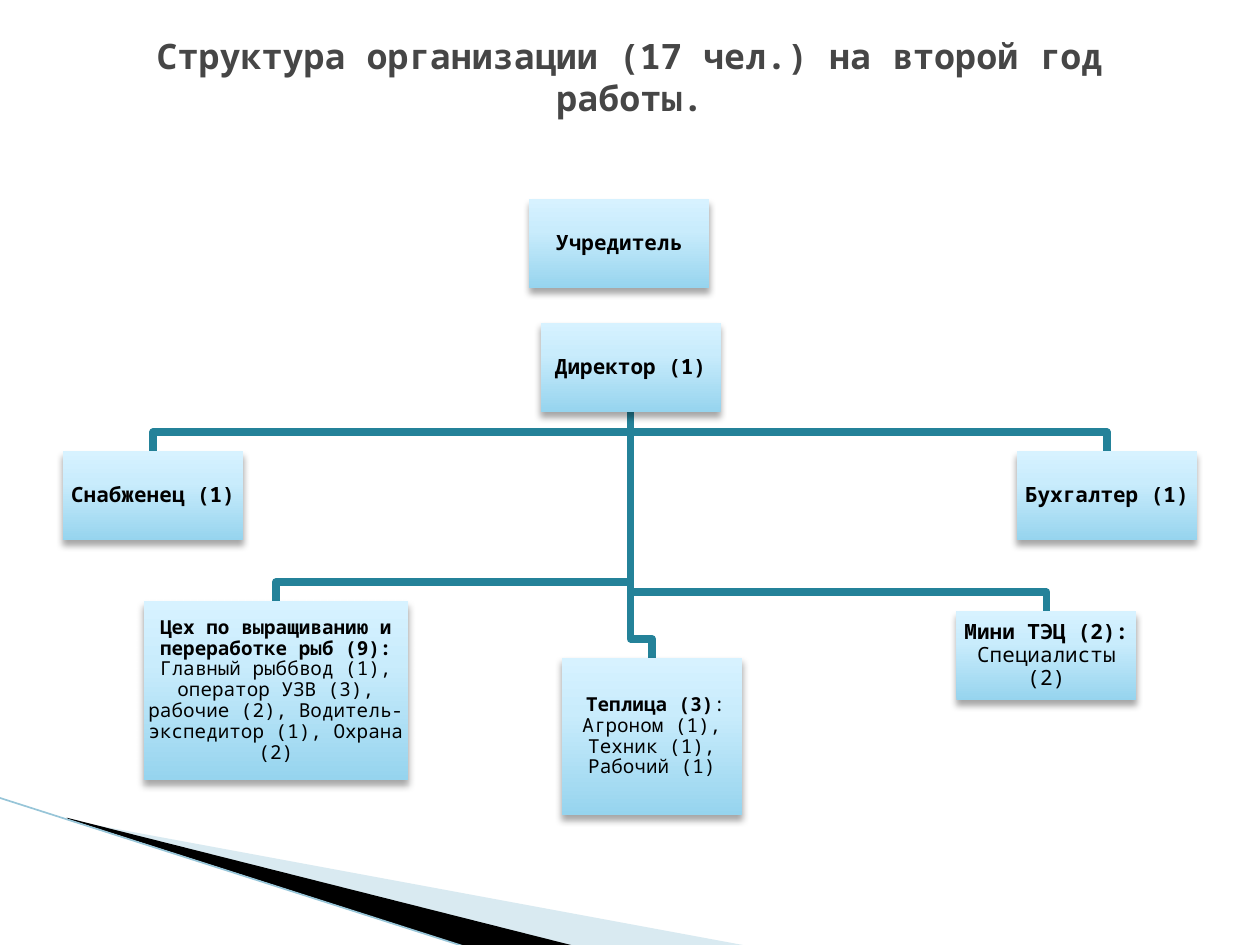
import copy
from dataclasses import dataclass

import lxml.etree
import pptx
import pptx.dml.color
import pptx.enum.shapes
import pptx.enum.text
import pptx.oxml.ns
import pptx.util

Inches = pptx.util.Inches
qn = pptx.oxml.ns.qn


@dataclass
class Theme:
    font: str = "Noto Sans Mono"
    title: int = 20
    body: int = 12
    small: int = 11
    tiny: int = 7
    ink: str = "000000"
    head: str = "464646"
    link: str = "248299"
    mist: str = "A0CBDC"
    edge: str = "97C5D8"
    grad: tuple = ((0, "96D4EE"), (0.65, "C9ECFC"), (1, "D7F2FF"))


def rgb(code):
    return pptx.dml.color.RGBColor.from_string(code)


def node(base, tag, **attrs):
    return lxml.etree.SubElement(base, qn(tag), attrs)


def add_run(para, text, *, font, size, color, bold=False):
    run = para.add_run()
    run.text = text
    run.font.name = font
    run.font.size = pptx.util.Pt(size)
    run.font.bold = bold
    run.font.color.rgb = rgb(color)


class Deck:
    def __init__(self, theme):
        self.theme = theme
        self.file = pptx.Presentation()
        self.file.slide_width = Inches(10)
        self.file.slide_height = Inches(7.5)
        self.slide = self.file.slides.add_slide(self.file.slide_layouts[6])
        self.shapes = self.slide.shapes

    def label(self, shape, runs, color, inset=None, gap=None):
        """Fill a shape with runs of (text, size, bold)."""
        frame = shape.text_frame
        frame.word_wrap = True
        frame.vertical_anchor = pptx.enum.text.MSO_ANCHOR.MIDDLE
        if inset is not None:
            frame.margin_left = frame.margin_right = Inches(inset)
            frame.margin_top = frame.margin_bottom = Inches(inset)
        para = frame.paragraphs[0]
        para.alignment = pptx.enum.text.PP_ALIGN.CENTER
        if gap:
            para.line_spacing = gap
        for text, size, bold in runs:
            add_run(para, text, font=self.theme.font, size=size,
                    color=color, bold=bold)

    def title(self, text, area):
        box = self.shapes.add_textbox(*map(Inches, area))
        self.label(box, [(text, self.theme.title, True)], self.theme.head)

    def trace(self, points, close):
        spots = [(Inches(x), Inches(y)) for x, y in points]
        maker = self.shapes.build_freeform(*spots[0])
        maker.add_line_segments(spots[1:], close=close)
        shape = maker.convert_to_shape()
        shape.shadow.inherit = False
        return shape

    def wedge(self, points, color, alpha=None):
        shape = self.trace(points, True)
        shape.fill.solid()
        shape.fill.fore_color.rgb = rgb(color)
        shape.line.fill.background()
        if alpha:
            tone = shape._element.spPr.find(qn("a:solidFill"))[0]
            node(tone, "a:alpha", val=str(alpha * 1000))

    def line(self, start, end, color, width):
        kind = pptx.enum.shapes.MSO_CONNECTOR.STRAIGHT
        line = self.shapes.add_connector(kind, *map(Inches, start + end))
        line.line.color.rgb = rgb(color)
        line.line.width = pptx.util.Pt(width)
        node(line._element.spPr, "a:effectLst")

    def elbow(self, source, target, drop=0.15):
        """Link the foot of one box to the top of another."""
        x, y = source[0] + source[2] / 2, source[1] + source[3]
        to, top = target[0] + target[2] / 2, target[1]
        bend = top - drop
        shape = self.trace([(x, y), (x, bend), (to, bend), (to, top)], False)
        shape.fill.background()
        shape.line.color.rgb = rgb(self.theme.link)
        shape.line.width = pptx.util.Pt(4.33)

    def card(self, area, runs, inset=0.01):
        kind = pptx.enum.shapes.MSO_SHAPE.RECTANGLE
        shape = self.shapes.add_shape(kind, *map(Inches, area))
        shape.line.fill.background()
        # Three-stop gradient, dark at the foot
        shape.fill.gradient()
        shape.fill.gradient_angle = 90
        props = shape._element.spPr
        stops = props.find(qn("a:gradFill")).find(qn("a:gsLst"))
        stops.append(copy.deepcopy(stops[0]))
        for stop, (place, color) in zip(shape.fill.gradient_stops,
                                        self.theme.grad):
            stop.position = place
            stop.color.rgb = rgb(color)
        # Soft shadow below
        shape.shadow.inherit = False
        shade = node(props.find(qn("a:effectLst")), "a:outerShdw",
                     blurRad=str(pptx.util.Pt(4)), dist=str(pptx.util.Pt(3)),
                     dir="5400000", rotWithShape="0")
        tone = node(shade, "a:srgbClr", val=self.theme.ink)
        node(tone, "a:alpha", val="35000")
        self.label(shape, runs, self.theme.ink, inset, 0.9)


def main():
    theme = Theme()
    deck = Deck(theme)
    body, small = theme.body, theme.small
    wide, high = 1.43, 0.71

    # Corner wedges
    deck.wedge([(0.55, 6.51), (5.95, 7.51), (4.56, 7.51), (0.55, 6.5)],
               theme.mist, 40)
    deck.wedge([(0.53, 6.49), (4.57, 7.51), (3.72, 7.52), (0.54, 6.5)],
               theme.ink)
    deck.line((-0.01, 6.33), (3.71, 7.52), theme.edge, 0.95)

    deck.title("Структура организации (17 чел.) на второй год работы.",
               (0.5, 0.3, 9, 0.61))

    # Staff boxes: area, runs
    owner = (4.2, 1.58, wide, high), [("Учредитель", body, True)]
    chief = (4.29, 2.56, wide, high), [("Директор (1)", body, True)]
    buyer = (0.5, 3.58, wide, high), [("Снабженец (1)", body, True)]
    fish = (1.14, 4.77, 2.1, 2 * high), [
        ("Цех по выращиванию и переработке рыб (9): ", small, True),
        ("Главный рыббвод (1), оператор УЗВ (3), рабочие (2), "
         "Водитель-экспедитор (1), Охрана (2)", small, False)]
    green = (4.46, 5.22, wide, 1.25), [
        (" ", theme.tiny, False),
        ("Теплица (3)", small, True),
        (": Агроном (1), Техник (1), Рабочий (1)", small, False)]
    power = (7.59, 4.85, wide, high), [
        ("Мини ТЭЦ (2): ", body, True), ("Специалисты (2)", body, False)]
    clerk = (8.07, 3.58, wide, high), [("Бухгалтер (1)", body, True)]

    # Links lie behind the boxes
    for area, _ in (clerk, power, green, fish, buyer):
        deck.elbow(chief[0], area)
    for area, runs in (owner, chief, buyer, fish, green, power, clerk):
        deck.card(area, runs)

    deck.file.save("out.pptx")


if __name__ == "__main__":
    main()
